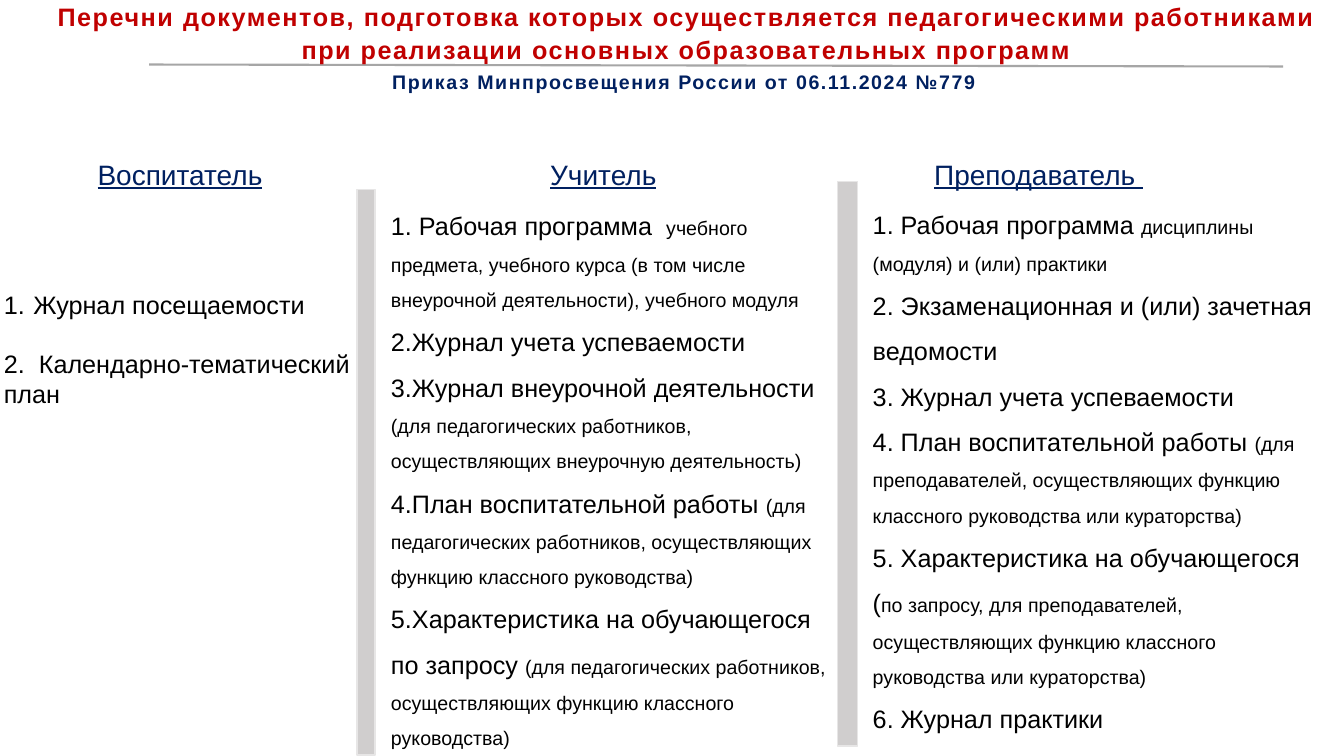
from dataclasses import dataclass

from lxml.etree import SubElement
from pptx import Presentation
from pptx.dml.color import RGBColor as Rgb
from pptx.enum.shapes import MSO_CONNECTOR as Connector, MSO_SHAPE as Preset
from pptx.enum.text import PP_ALIGN as Align
from pptx.oxml.ns import qn
from pptx.util import Pt

FONT = "Arial"
COLORS = {"title": "C00000", "accent": "002060", "body": "000000", "rule": "A6A6A6",
          "bar": "D0CECE", "bar_edge": "E7E6E6"}


@dataclass
class Area:
    left: float
    top: float
    width: float
    height: float


@dataclass
class Item:
    main: str
    detail: str = ""
    numbered: bool = False


@dataclass
class Style:
    color: str = "body"
    size: float = 18
    bold: bool = False
    underline: bool = False
    tracking: float = 0
    align: Align = Align.LEFT
    line_spacing: float = 1
    gap: float = 0


@dataclass
class Block:
    area: Area
    items: list[Item]
    style: Style


DETAIL_SIZE = 14
HEADING = Style("accent", 20, underline=True)
COLUMN = Style(line_spacing=1.5)

BLOCKS = [
    Block(Area(67.7, 46.1, 841.7, 24.5),
          [Item("Приказ Минпросвещения России от 06.11.2024 №779")],
          Style("accent", 14, bold=True, tracking=1.1, align=Align.CENTER)),
    Block(Area(62.6, 108.7, 133.9, 31.7), [Item("Воспитатель")], HEADING),
    Block(Area(385.9, 108.7, 114.5, 31.7), [Item("Учитель")], HEADING),
    Block(Area(660.2, 108.7, 165.6, 31.7), [Item("Преподаватель ")], HEADING),
    Block(Area(-4.3, 203, 281.5, 94.3),
          [Item("Журнал посещаемости", numbered=True),
           Item("2.  Календарно-тематический план")],
          Style(gap=20.7)),
    Block(Area(272.2, 136.1, 334.1, 403.9),
          [Item("1. Рабочая программа  ",
                "учебного предмета, учебного курса (в том числе внеурочной "
                "деятельности), учебного модуля"),
           Item("2.Журнал учета успеваемости"),
           Item("3.Журнал внеурочной деятельности ",
                "(для педагогических работников, осуществляющих внеурочную деятельность)"),
           Item("4.План воспитательной работы ",
                "(для педагогических работников, осуществляющих функцию классного руководства)"),
           Item("5.Характеристика на обучающегося по запросу ",
                "(для педагогических работников, осуществляющих функцию классного руководства)")],
          COLUMN),
    Block(Area(616.3, 135.4, 342, 392.4),
          [Item("1. Рабочая программа ", "дисциплины (модуля) и (или) практики"),
           Item("2. Экзаменационная и (или) зачетная ведомости"),
           Item("3. Журнал учета успеваемости"),
           Item("4. План воспитательной работы ",
                "(для преподавателей, осуществляющих функцию классного руководства "
                "или кураторства)"),
           Item("5. Характеристика на обучающегося (",
                "по запросу, для преподавателей, осуществляющих функцию классного "
                "руководства или кураторства)"),
           Item("6. Журнал практики")],
          COLUMN),
    Block(Area(13.7, -2.9, 959, 51.8),
          [Item("Перечни документов, подготовка которых осуществляется "
                "педагогическими работниками "),
           Item("при реализации основных образовательных программ ")],
          Style("title", bold=True, tracking=1.1, align=Align.CENTER, gap=2)),
]

BARS = [Area(254.9, 135.4, 13, 403.9), Area(598.3, 129.6, 14.4, 403.2)]


def color(name: str) -> Rgb:
    return Rgb.from_string(COLORS[name])


def place(area: Area) -> tuple:
    return Pt(area.left), Pt(area.top), Pt(area.width), Pt(area.height)


def add_number(para, indent: float) -> None:
    properties = para._p.get_or_add_pPr()
    properties.set("marL", str(Pt(indent)))
    properties.set("indent", str(-Pt(indent)))
    SubElement(properties, qn("a:buFont"), typeface=FONT)
    SubElement(properties, qn("a:buAutoNum"), type="arabicPeriod")


def fill_paragraph(para, item: Item, style: Style, first: bool) -> None:
    para.alignment = style.align
    para.line_spacing = style.line_spacing
    if style.gap and not first:
        para.space_before = Pt(style.gap)
    if item.numbered:
        add_number(para, 21)
    font = para.font
    font.name = FONT
    font.size = Pt(style.size)
    font.bold = style.bold
    font.underline = style.underline
    font.color.rgb = color(style.color)
    span = para.add_run()
    span.text = item.main
    if style.tracking:
        span._r.get_or_add_rPr().set("spc", str(round(style.tracking * 100)))
    if item.detail:
        detail = para.add_run()
        detail.text = item.detail
        detail.font.size = Pt(DETAIL_SIZE)


def add_block(page, block: Block) -> None:
    frame = page.shapes.add_textbox(*place(block.area)).text_frame
    frame.word_wrap = True
    for index, item in enumerate(block.items):
        para = frame.add_paragraph() if index else frame.paragraphs[0]
        fill_paragraph(para, item, block.style, index == 0)


def add_bar(page, area: Area) -> None:
    bar = page.shapes.add_shape(Preset.RECTANGLE, *place(area))
    bar.shadow.inherit = False
    bar.fill.solid()
    bar.fill.fore_color.rgb = color("bar")
    bar.line.color.rgb = color("bar_edge")
    bar.line.width = Pt(1)


def add_rule(page) -> None:
    rule = page.shapes.add_connector(Connector.STRAIGHT, Pt(106.6), Pt(46.1), Pt(916.6), Pt(47.5))
    rule.line.color.rgb = color("rule")
    rule.line.width = Pt(1.5)
    SubElement(rule._element.spPr, qn("a:effectLst"))


def main() -> None:
    deck = Presentation()
    deck.slide_width, deck.slide_height = Pt(960), Pt(540)
    page = deck.slides.add_slide(deck.slide_layouts[6])
    add_rule(page)
    for area in BARS:
        add_bar(page, area)
    for block in BLOCKS:
        add_block(page, block)
    deck.save("out.pptx")


if __name__ == "__main__":
    main()
